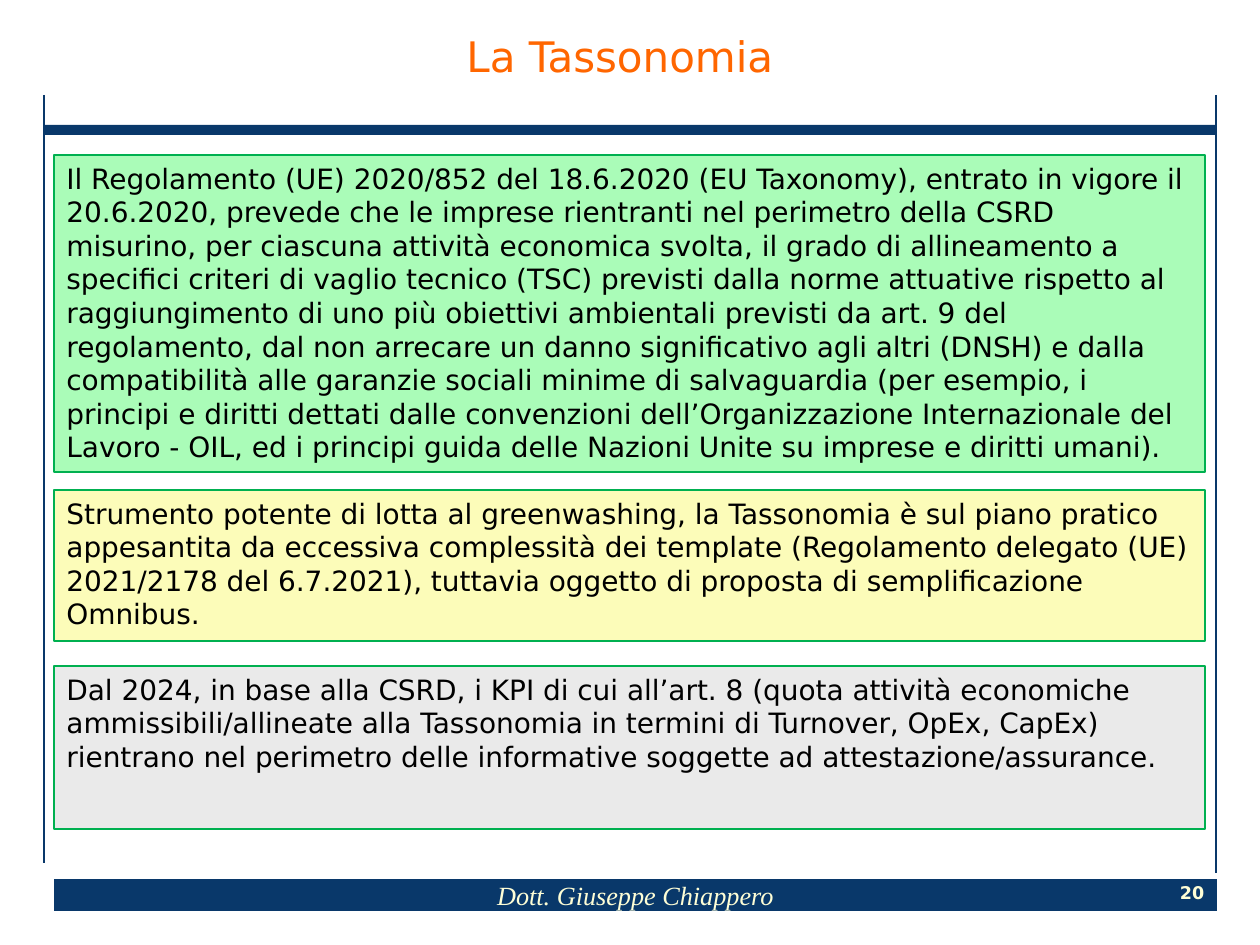
from dataclasses import dataclass

from lxml.etree import SubElement
from pptx import Presentation
from pptx.dml.color import RGBColor
from pptx.enum.shapes import MSO_CONNECTOR as Connector, MSO_SHAPE as Shape
from pptx.enum.text import MSO_ANCHOR as Anchor, PP_ALIGN as Align
from pptx.oxml.ns import qn
from pptx.util import Emu, Pt

EMU_PER_PX = 914400 / 126


@dataclass(frozen=True)
class Theme:
    navy: str = "09386A"
    cream: str = "FEFED6"
    orange: str = "FF6600"
    black: str = "000000"
    border: str = "00B050"
    green: str = "AAFCB8"
    yellow: str = "FCFCB9"
    gray: str = "EAEAEA"
    sans: str = "DejaVu Sans"
    serif: str = "Times New Roman"
    title_size: int = 24
    body_size: int = 16
    footer_size: int = 15
    number_size: int = 10


def px(*lengths):
    return [Emu(round(length * EMU_PER_PX)) for length in lengths]


def write_text(shape, text, *, size, font, color, align=Align.LEFT, anchor=Anchor.MIDDLE,
               wrap=True, bold=False, italic=False, line_spacing=None):
    frame = shape.text_frame
    frame.word_wrap = wrap
    frame.vertical_anchor = anchor
    paragraph = frame.paragraphs[0]
    paragraph.alignment = align
    if line_spacing:
        paragraph.line_spacing = line_spacing
    run = paragraph.add_run()
    run.text = text
    run.font.size = Pt(size)
    run.font.name = font
    run.font.bold = bold
    run.font.italic = italic
    run.font.color.rgb = RGBColor.from_string(color)


class SlideBuilder:
    def __init__(self, slide, theme):
        self.slide = slide
        self.theme = theme

    def bar(self, left, top, width, height, fill, border=None):
        shape = self.slide.shapes.add_shape(Shape.RECTANGLE, *px(left, top, width, height))
        shape.shadow.inherit = False
        shape.fill.solid()
        shape.fill.fore_color.rgb = RGBColor.from_string(fill)
        if border:
            shape.line.color.rgb = RGBColor.from_string(border)
            shape.line.width = Pt(0.75)
        else:
            shape.line.fill.background()
        return shape

    def panel(self, top, height, fill, text):
        shape = self.bar(54, top, 1151, height, fill, self.theme.border)
        write_text(shape, text, size=self.theme.body_size, font=self.theme.sans,
                   color=self.theme.black, anchor=Anchor.TOP)

    def vertical_line(self, x, top, bottom):
        line = self.slide.shapes.add_connector(Connector.STRAIGHT, *px(x, top, x, bottom))
        line.line.color.rgb = RGBColor.from_string(self.theme.navy)
        line.line.width = Pt(1)
        SubElement(line._element.spPr, qn("a:effectLst"))

    def label(self, left, top, width, height, text, **style):
        shape = self.slide.shapes.add_textbox(*px(left, top, width, height))
        frame = shape.text_frame
        frame.margin_left = frame.margin_right = frame.margin_top = frame.margin_bottom = 0
        write_text(shape, text, font=self.theme.sans, align=Align.CENTER, wrap=False, **style)


def main():
    theme = Theme()
    presentation = Presentation()
    presentation.slide_width, presentation.slide_height = px(1260, 945)
    slide = presentation.slides.add_slide(presentation.slide_layouts[6])
    builder = SlideBuilder(slide, theme)

    builder.bar(44, 125, 1171, 10, theme.navy)
    footer = builder.bar(54, 879, 1163, 32, theme.navy)
    write_text(footer, "Dott. Giuseppe Chiappero", size=theme.footer_size, font=theme.serif,
               color=theme.cream, align=Align.CENTER, italic=True)
    builder.vertical_line(44, 95, 863)
    builder.vertical_line(1216, 95, 873)
    builder.label(1176, 880, 32, 25, "20", size=theme.number_size, color=theme.cream, bold=True)
    builder.label(25, 29, 1190, 63, "La Tassonomia", size=theme.title_size, color=theme.orange,
                  line_spacing=0.8)

    panels = [
        (155, 317, theme.green,
         "Il Regolamento (UE) 2020/852 del 18.6.2020 (EU Taxonomy), entrato in vigore il "
         "20.6.2020, prevede che le imprese rientranti nel perimetro della CSRD misurino, "
         "per ciascuna attività economica svolta, il grado di allineamento a specifici "
         "criteri di vaglio tecnico (TSC) previsti dalla norme attuative rispetto al "
         "raggiungimento di uno più obiettivi ambientali previsti da art. 9 del regolamento, "
         "dal non arrecare un danno significativo agli altri (DNSH) e dalla compatibilità "
         "alle garanzie sociali minime di salvaguardia (per esempio, i principi e diritti "
         "dettati dalle convenzioni dell’Organizzazione Internazionale del Lavoro - OIL, ed "
         "i principi guida delle Nazioni Unite su imprese e diritti umani)."),
        (490, 151, theme.yellow,
         "Strumento potente di lotta al greenwashing, la Tassonomia è sul piano pratico "
         "appesantita da eccessiva complessità dei template (Regolamento delegato (UE) "
         "2021/2178 del 6.7.2021), tuttavia oggetto di proposta di semplificazione Omnibus."),
        (666, 163, theme.gray,
         "Dal 2024, in base alla CSRD, i KPI di cui all’art. 8 (quota attività economiche "
         "ammissibili/allineate alla Tassonomia in termini di Turnover, OpEx, CapEx) "
         "rientrano nel perimetro delle informative soggette ad attestazione/assurance."),
    ]
    for top, height, fill, text in panels:
        builder.panel(top, height, fill, text)

    presentation.save("out.pptx")


if __name__ == "__main__":
    main()
